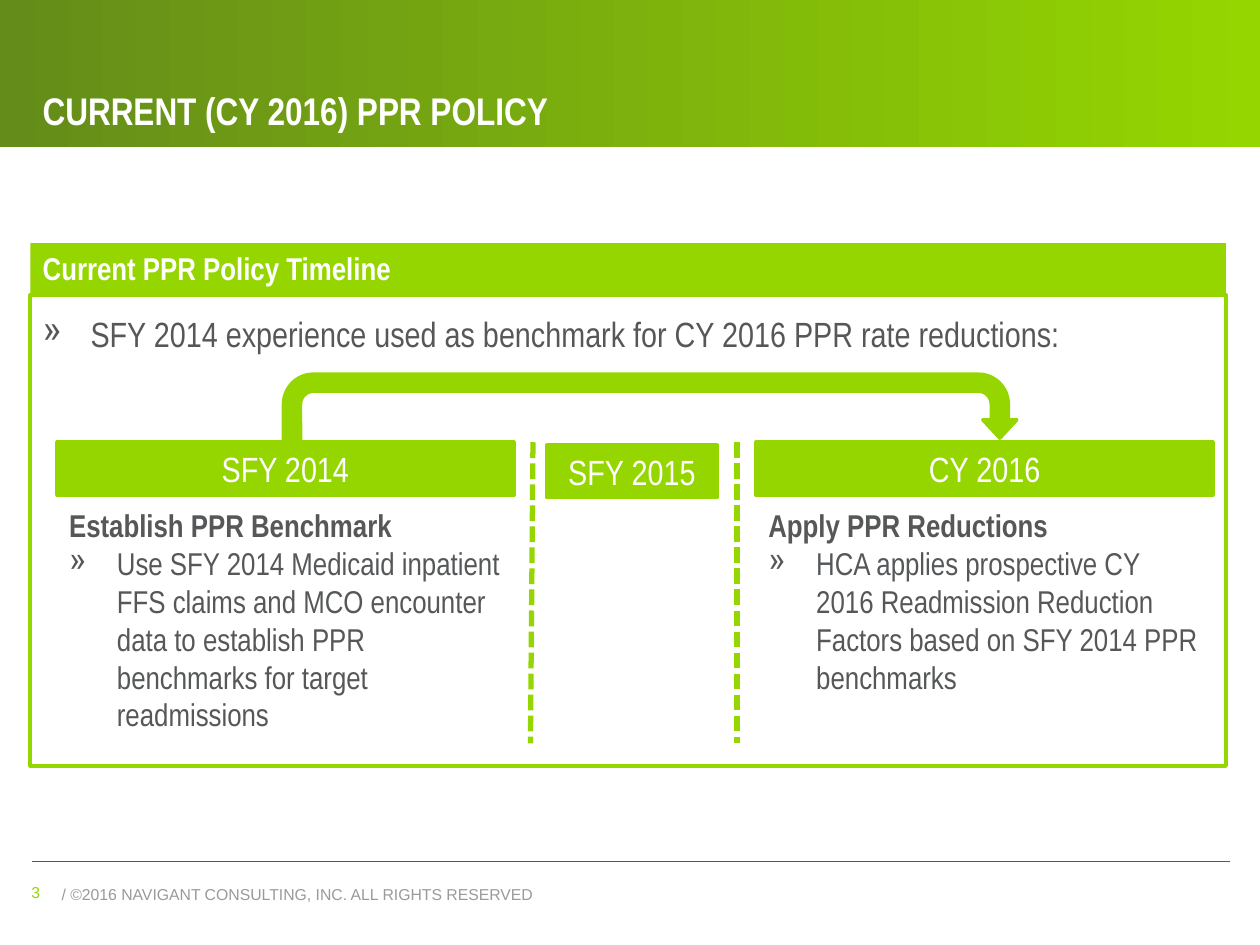
from lxml import etree
from pptx import Presentation, util as u
from pptx.dml.color import RGBColor
from pptx.enum import dml, shapes, text
from pptx.oxml.ns import qn

GREEN, DARK_GREEN = "95D600", "648C1A"
GRAY, LIGHT_GRAY, WHITE = "555759", "989A9D", "FFFFFF"
NARROW = "Arial Narrow"


def color(value):
    return RGBColor.from_string(value)


def inches(*lengths):
    return [u.Inches(length) for length in lengths]


def add_bullet(para):
    properties = para._p.get_or_add_pPr()
    properties.set("marL", str(u.Inches(0.38)))
    properties.set("indent", str(u.Inches(-0.38)))
    etree.SubElement(properties, qn("a:buChar")).set("char", "»")


def write(box, lines, size, fill, font=NARROW, anchor=text.MSO_ANCHOR.TOP,
          align=text.PP_ALIGN.LEFT):
    frame = box.text_frame
    frame.word_wrap = True
    frame.vertical_anchor = anchor
    for index, (words, bold, bullet) in enumerate(lines):
        para = frame.paragraphs[0] if index == 0 else frame.add_paragraph()
        para.text = words
        para.alignment = align
        if bullet:
            add_bullet(para)
        para.font.name = font
        para.font.size = u.Pt(size)
        para.font.bold = bold
        para.font.color.rgb = color(fill)


def add_text(page, area, lines, size, fill, **style):
    box = page.shapes.add_textbox(*inches(*area))
    write(box, lines, size, fill, **style)


def add_block(page, area, fill=None, line=None, kind=shapes.MSO_SHAPE.RECTANGLE):
    block = page.shapes.add_shape(kind, *inches(*area))
    block.shadow.inherit = False
    if fill:
        block.fill.solid()
        block.fill.fore_color.rgb = color(fill)
    else:
        block.fill.background()
    if line:
        block.line.color.rgb = color(line)
        block.line.width = u.Pt(2)
    else:
        block.line.fill.background()
    return block


def add_line(page, start, end, fill, width, dash=None):
    line = page.shapes.add_connector(
        shapes.MSO_CONNECTOR.STRAIGHT, *inches(*start, *end))
    line.line.color.rgb = color(fill)
    line.line.width = u.Pt(width)
    if dash:
        line.line.dash_style = dash
    etree.SubElement(line._element.spPr, qn("a:effectLst"))


def add_title_band(page, left, top, width, height):
    band = add_block(page, (left, top, width, height))
    band.fill.gradient()
    band.fill.gradient_angle = 0
    for stop, value in zip(band.fill.gradient_stops, (DARK_GREEN, GREEN)):
        stop.color.rgb = color(value)
    add_text(page, (left + 0.24, top, width - 0.47, height - 0.06),
             [("CURRENT (CY 2016) PPR POLICY", True, False)], 22, WHITE,
             anchor=text.MSO_ANCHOR.BOTTOM)


def add_footer(page, left, top, width):
    add_line(page, (left, top), (left + width, top), GRAY, 0.75)
    add_text(page, (left + 0.14, top + 0.13, 6.37, 0.22),
             [("/ ©2016 NAVIGANT CONSULTING, INC. ALL RIGHTS RESERVED", False, False)],
             9, LIGHT_GRAY, font="Arial")
    add_text(page, (left - 0.1, top + 0.12, 0.68, 0.23),
             [("3", False, False)], 9, GREEN, font="Arial")


def add_period(page, left, top, width, label, heading=None, detail=None):
    block = add_block(page, (left, top, width, 0.42), GREEN, GREEN)
    write(block, [(label, False, False)], 20, WHITE,
          anchor=text.MSO_ANCHOR.MIDDLE, align=text.PP_ALIGN.CENTER)
    if heading:
        add_text(page, (left, top + 0.46, width, 2),
                 [(heading, True, False), (detail, False, True)], 18, GRAY)


def add_timeline(page, left, top, width, height):
    header_height = 0.41
    add_block(page, (left, top + header_height, width, height - header_height),
              line=GREEN)
    header = add_block(page, (left, top, width, 0.4), GREEN)
    write(header, [("Current PPR Policy Timeline", True, False)], 18, WHITE)
    add_text(page, (left, top + 0.5, width, 0.44),
             [("SFY 2014 experience used as benchmark for CY 2016 PPR rate reductions:",
               False, True)], 20, GRAY)

    row = top + 1.58
    for start, end in ((3.99, 3.97), (5.61, 5.61)):
        add_line(page, (left + start, row), (left + end, row + 2.39), GREEN, 3,
                 dml.MSO_LINE.SQUARE_DOT)
    add_period(page, left + 0.21, row, 3.63, "SFY 2014", "Establish PPR Benchmark",
               "Use SFY 2014 Medicaid inpatient FFS claims and MCO encounter data "
               "to establish PPR benchmarks for target readmissions")
    add_period(page, left + 5.76, row, 3.63, "CY 2016", "Apply PPR Reductions",
               "HCA applies prospective CY 2016 Readmission Reduction Factors "
               "based on SFY 2014 PPR benchmarks")
    arrow = add_block(page, (left + 2.01, row - 0.54, 5.82, 0.54), GREEN, GREEN,
                      shapes.MSO_SHAPE.U_TURN_ARROW)
    for index, value in enumerate((0.25, 0.25, 0.27, 0.44, 0.94)):
        arrow.adjustments[index] = value
    add_period(page, left + 4.1, row + 0.02, 1.35, "SFY 2015")


def main():
    deck = Presentation()
    deck.slide_width, deck.slide_height = inches(10, 7.5)
    page = deck.slides.add_slide(deck.slide_layouts[6])
    add_title_band(page, 0, 0, 10, 1.17)
    add_footer(page, 0.25, 6.84, 9.51)
    add_timeline(page, 0.24, 1.93, 9.49, 4.15)
    deck.save("out.pptx")


if __name__ == "__main__":
    main()
